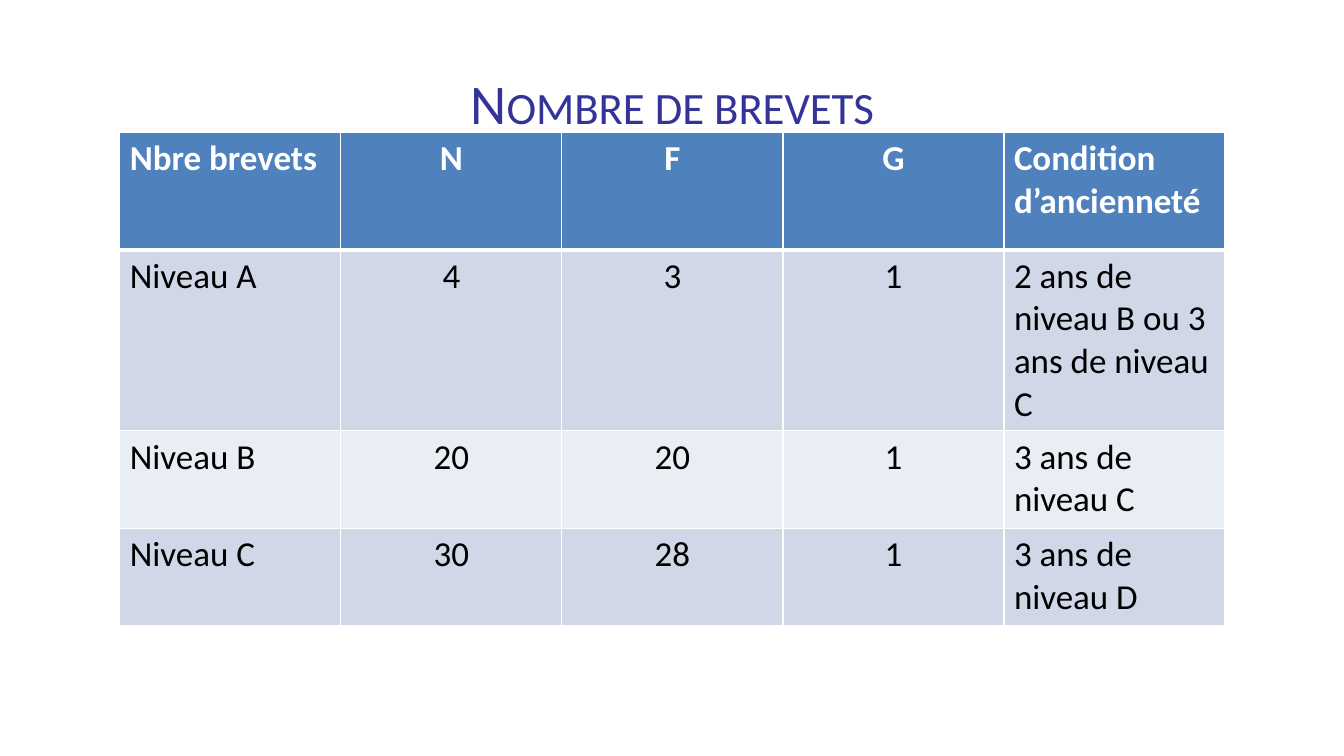
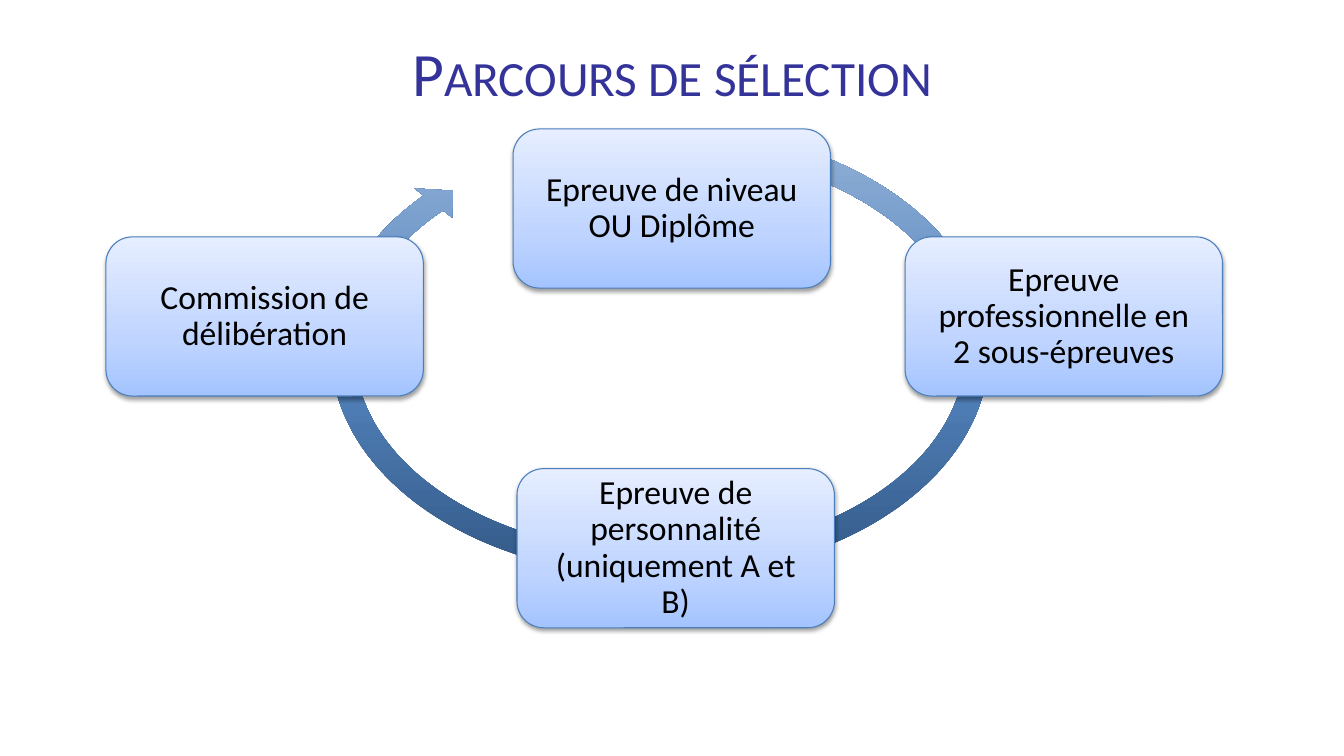
from pptx import Presentation
from pptx.dml.color import RGBColor
from pptx.enum.shapes import MSO_SHAPE
from pptx.enum.text import MSO_ANCHOR, MSO_AUTO_SIZE, PP_ALIGN
from pptx.oxml import parse_xml
from pptx.oxml.ns import nsdecls, qn
from pptx.util import Cm, Pt

# Shared style
FONT = "Calibri"
TITLE = RGBColor(0x33, 0x33, 0x99)
WHITE = RGBColor(0xFF, 0xFF, 0xFF)
BLACK = RGBColor(0, 0, 0)
HEAD = RGBColor(0x4F, 0x81, 0xBD)
BANDS = [RGBColor(0xD0, 0xD8, 0xE8), RGBColor(0xE9, 0xED, 0xF4)]
EDGE = RGBColor(0x4B, 0x7E, 0xBC)

# Gradient stops: percent and colour, from bottom to top
RING = [
    (0, RGBColor(0x31, 0x56, 0x83)),
    (48, RGBColor(0x54, 0x85, 0xBF)),
    (100, RGBColor(0x95, 0xB3, 0xD7)),
]
GLOSS = [
    (0, RGBColor(0xA4, 0xC4, 0xFF)),
    (35, RGBColor(0xBF, 0xD4, 0xFF)),
    (100, RGBColor(0xE6, 0xEE, 0xFF)),
]

# Content
ROWS = [
    ["Nbre brevets", "N", "F", "G", "Condition d’ancienneté"],
    ["Niveau A", "4", "3", "1", "2 ans de niveau B ou 3 ans de niveau C"],
    ["Niveau B", "20", "20", "1", "3 ans de niveau C"],
    ["Niveau C", "30", "28", "1", "3 ans de niveau D"],
]
HEIGHTS = [2.97, 4.55, 2.46, 2.46]
COL = 5.57

# Steps: left, top, text
STEPS = [
    (12.93, 3.25, "Epreuve de niveau OU Diplôme"),
    (22.81, 5.97, "Epreuve professionnelle en 2 sous-épreuves"),
    (13.03, 11.81, "Epreuve de personnalité (uniquement A et B)"),
    (2.67, 5.97, "Commission de délibération"),
]
ARC = [0.05, 2.73, 127.99, 180.53, 0.05]


def style(para, size, color, bold=False):
    font = para.runs[0].font
    font.name, font.size, font.bold = FONT, Pt(size), bold
    font.color.rgb = color


def add_slide(deck, text, size, space=1.0):
    slide = deck.slides.add_slide(deck.slide_layouts[5])
    title = slide.shapes.title
    title.left, title.top = Cm(1.7), Cm(0.76)
    title.width, title.height = Cm(30.48), Cm(3.18)
    frame = title.text_frame
    frame.text = text
    frame.auto_size = MSO_AUTO_SIZE.NONE
    frame.vertical_anchor = MSO_ANCHOR.TOP
    para = frame.paragraphs[0]
    para.alignment = PP_ALIGN.CENTER
    para.line_spacing = space
    style(para, size, TITLE)
    para.runs[0].font._element.set("cap", "small")
    return slide


def add_edge(cell, side, width):
    cell._tc.get_or_add_tcPr().append(parse_xml(
        f'<a:ln{side} {nsdecls("a")} w="{Pt(width)}"><a:solidFill>'
        f'<a:srgbClr val="{WHITE}"/></a:solidFill></a:ln{side}>'))


def fill_cell(cell, text, row, col):
    top = row == 0
    for side in "LRTB":
        thick = (row, side) in [(0, "B"), (1, "T")]
        add_edge(cell, side, 3 if thick else 1)
    cell.fill.solid()
    cell.fill.fore_color.rgb = HEAD if top else BANDS[(row - 1) % 2]
    cell.text_frame.text = text
    para = cell.text_frame.paragraphs[0]
    if 0 < col < len(ROWS[0]) - 1:
        para.alignment = PP_ALIGN.CENTER
    style(para, 25, WHITE if top else BLACK, top)


def add_grid(slide):
    grid = slide.shapes.add_table(
        len(ROWS), len(ROWS[0]), Cm(3.02), Cm(3.33),
        Cm(COL * len(ROWS[0])), Cm(sum(HEIGHTS))).table
    grid.first_row = grid.horz_banding = False
    for col in grid.columns:
        col.width = Cm(COL)
    for r, (row, high) in enumerate(zip(ROWS, HEIGHTS)):
        grid.rows[r].height = Cm(high)
        for c, text in enumerate(row):
            fill_cell(grid.cell(r, c), text, r, c)


def add_form(slide, kind, box, stops):
    form = slide.shapes.add_shape(kind, *map(Cm, box))
    form.shadow.inherit = False
    marks = "".join(
        f'<a:gs pos="{pos * 1000}"><a:srgbClr val="{color}"/></a:gs>'
        for pos, color in stops)
    geom = form._element.spPr.find(qn("a:prstGeom"))
    geom.addnext(parse_xml(
        f'<a:gradFill {nsdecls("a")} rotWithShape="1"><a:gsLst>{marks}</a:gsLst>'
        '<a:lin ang="16200000" scaled="0"/></a:gradFill>'))
    return form


def add_step(slide, left, top, text):
    step = add_form(slide, MSO_SHAPE.ROUNDED_RECTANGLE,
                    (left, top, 8, 4.01), GLOSS)
    step.line.color.rgb = EDGE
    step.line.width = Pt(0.75)
    # Soft shadow below the box
    step._element.spPr.find(qn("a:effectLst")).append(parse_xml(
        f'<a:outerShdw {nsdecls("a")} blurRad="{Pt(3.1)}" dist="{Pt(1.6)}" '
        'dir="5400000" rotWithShape="0"><a:srgbClr val="000000">'
        '<a:alpha val="38000"/></a:srgbClr></a:outerShdw>'))
    frame = step.text_frame
    frame.word_wrap = True
    frame.vertical_anchor = MSO_ANCHOR.MIDDLE
    frame.margin_left = frame.margin_right = Cm(0.44)
    frame.margin_top = frame.margin_bottom = Cm(0.44)
    frame.text = text
    para = frame.paragraphs[0]
    para.alignment = PP_ALIGN.CENTER
    para.line_spacing = 0.9
    style(para, 24, BLACK)


def add_cycle(slide):
    ring = add_form(slide, MSO_SHAPE.CIRCULAR_ARROW,
                    (8.05, 2.9, 17.17, 11.94), RING)
    ring.line.fill.background()
    for i, value in enumerate(ARC):
        ring.adjustments[i] = value
    for step in STEPS:
        add_step(slide, *step)


def main():
    deck = Presentation()
    deck.slide_width, deck.slide_height = Cm(33.87), Cm(19.05)
    add_grid(add_slide(deck, "Nombre de brevets", 40, 1.5))
    add_cycle(add_slide(deck, "Parcours de sélection", 44))
    deck.save("out.pptx")


if __name__ == "__main__":
    main()
